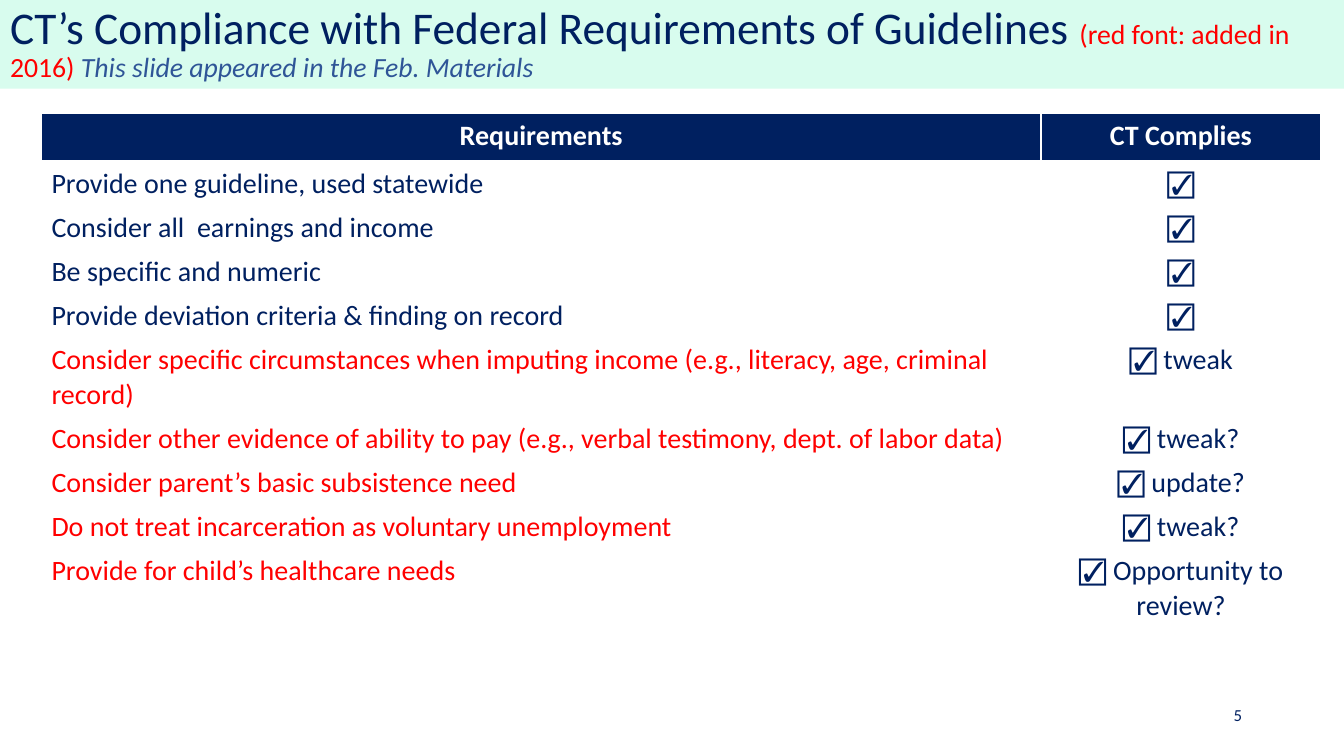
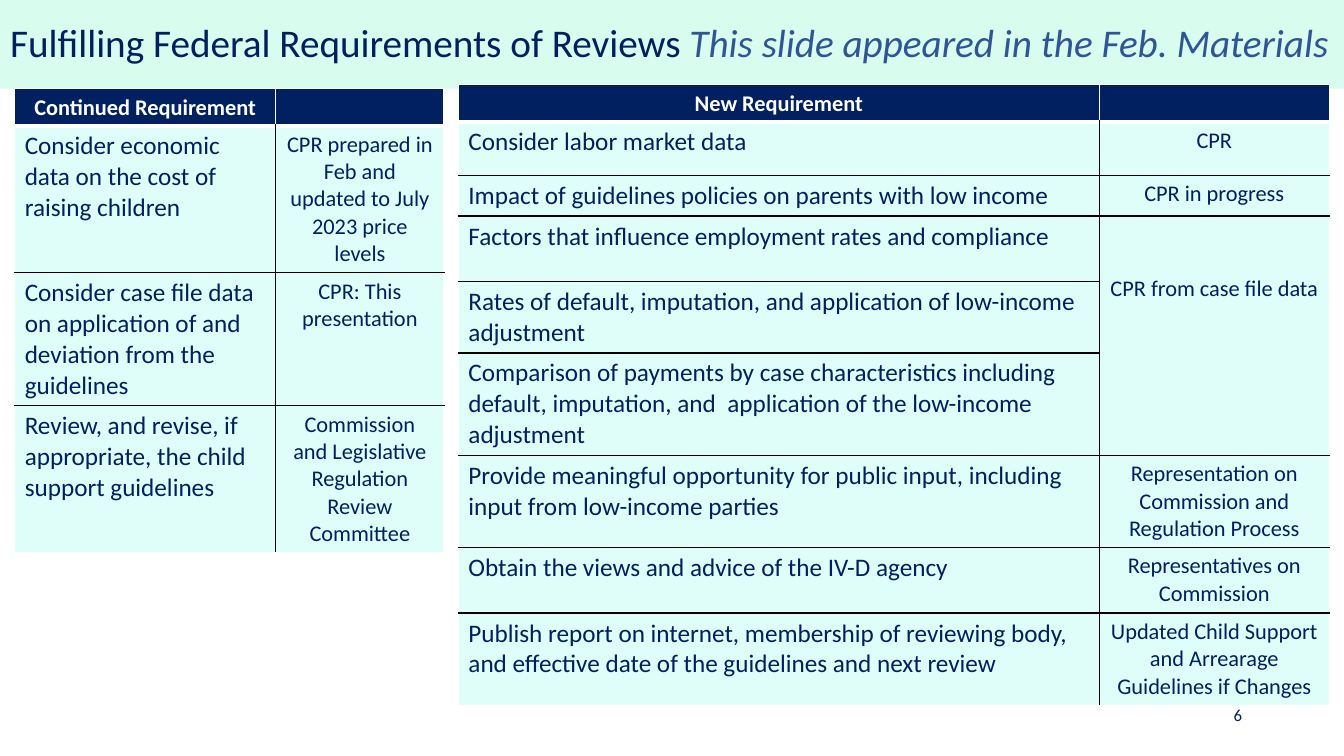
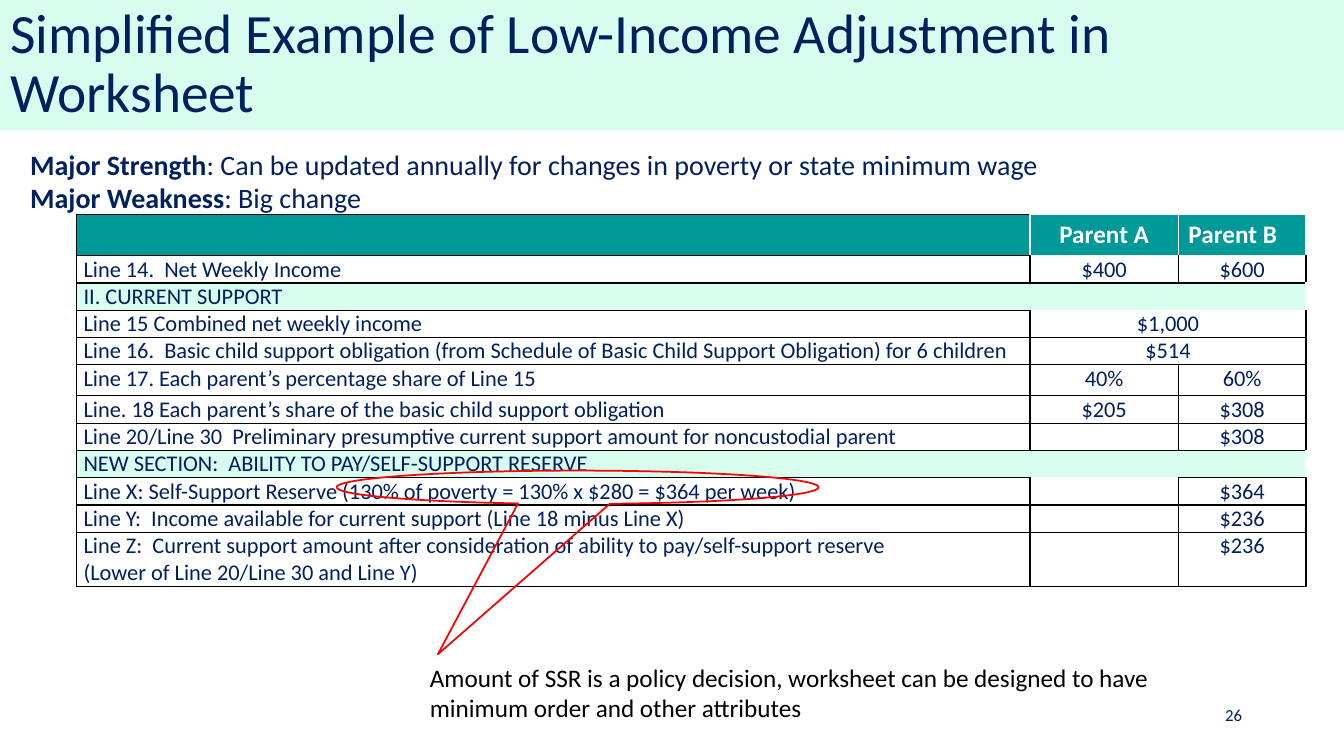
"""Builds three slides on child support guideline requirements."""
from lxml import etree
from pptx import Presentation
from pptx.dml.color import RGBColor
from pptx.enum import shapes, text
from pptx.oxml import ns
from pptx.util import Pt

NAVY = RGBColor(0x00, 0x20, 0x60)
BLUE = RGBColor(0x2F, 0x55, 0x97)
RED = RGBColor(0xFF, 0x00, 0x00)
BLACK = RGBColor(0x00, 0x00, 0x00)
WHITE = RGBColor(0xFF, 0xFF, 0xFF)
MINT = RGBColor(0xD8, 0xFC, 0xEE)
AQUA = RGBColor(0xDF, 0xFD, 0xF9)
TEAL = RGBColor(0x00, 0x99, 0x99)
FONT = "Calibri"
LEFT, CENTER, RIGHT = text.PP_ALIGN.LEFT, text.PP_ALIGN.CENTER, text.PP_ALIGN.RIGHT


def border(cell, sides, color, width=1):
    tc_pr = cell._tc.get_or_add_tcPr()
    for side in sides:
        ln = tc_pr.find(ns.qn("a:ln" + side))
        if ln is None:
            ln = etree.SubElement(tc_pr, ns.qn("a:ln" + side))
        ln.clear()
        ln.set("w", str(Pt(width)))
        fill = etree.SubElement(ln, ns.qn("a:solidFill"))
        etree.SubElement(fill, ns.qn("a:srgbClr")).set("val", str(color))


def make_table(s, left, top, widths, heights, rows, sizes, head_size, head_fill=NAVY,
               body_fill=WHITE, edge=WHITE, inner=WHITE, head_line=3, margins=(7.2, 3.6),
               space=6):
    frame = s.shapes.add_table(len(heights), len(widths), Pt(left), Pt(top),
                               Pt(sum(widths)), Pt(sum(heights)))
    t = frame.table
    t.horz_banding = False
    for col, width in zip(t.columns, widths):
        col.width = Pt(width)
    for i, height in enumerate(heights):
        t.rows[i].height = Pt(height)
        head = i == 0
        for j, size in enumerate(sizes):
            cell = t.cell(i, j)
            border(cell, "L", edge if j == 0 else WHITE if head else inner)
            border(cell, "R", edge if j == len(widths) - 1 else WHITE if head else inner)
            border(cell, "T", WHITE if i < 2 else inner)
            border(cell, "B", WHITE if head else edge if i == len(heights) - 1 else inner,
                   head_line if head else 1)
            cell.fill.solid()
            cell.fill.fore_color.rgb = head_fill if head else body_fill
            if not head:
                cell.margin_left = cell.margin_right = Pt(margins[0])
                cell.margin_top = cell.margin_bottom = Pt(margins[1])
            size = head_size if head else size
            tf = cell.text_frame
            for k, line in enumerate(rows[i][j].split("\n")):
                p = tf.add_paragraph() if k else tf.paragraphs[0]
                p.alignment = CENTER if head or j else LEFT
                if not line:
                    p._p.get_or_add_endParaRPr().set("sz", str(size * 100))
                    continue
                if j == 0 and not head:
                    p.space_before = Pt(space)
                r = p.add_run()
                r.text = line
                r.font.name, r.font.size, r.font.bold = FONT, Pt(size), head
                r.font.color.rgb = WHITE if head else NAVY
    return t


prs = Presentation()
prs.slide_width, prs.slide_height = Pt(960), Pt(540)

titles = [
    (63.4, "5", [("CT’s Compliance with Federal Requirements of Guidelines ", 32.4, NAVY),
                 ("(red font: added in 2016) ", 19.8, RED),
                 ("This slide appeared in the Feb. Materials", 19.8, BLUE)]),
    (63.4, "6", [("Fulfilling Federal Requirements of Reviews", 28, NAVY),
                 (" This slide appeared in the Feb. Materials", 28, BLUE)]),
    (92.9, "26", [("Simplified Example of Low-Income Adjustment in Worksheet", 39.6, NAVY)]),
]
for height, number, runs in titles:
    s = prs.slides.add_slide(prs.slide_layouts[5])
    sp = s.shapes.title
    sp.left, sp.top, sp.width, sp.height = Pt(0), Pt(0), Pt(960), Pt(height)
    sp.fill.solid()
    sp.fill.fore_color.rgb = MINT
    tf = sp.text_frame
    tf.auto_size = text.MSO_AUTO_SIZE.NONE
    tf.vertical_anchor = text.MSO_ANCHOR.MIDDLE
    p = tf.paragraphs[0]
    p.alignment, p.line_spacing = LEFT, 0.9
    for words, size, color in runs:
        r = p.add_run()
        r.text = words
        r.font.name, r.font.size, r.font.italic = FONT, Pt(size), color == BLUE
        r.font.color.rgb = color

    tf = s.shapes.add_textbox(Pt(859.7), Pt(501.8), Pt(34.6), Pt(17.3)).text_frame
    tf.word_wrap = True
    tf.vertical_anchor = text.MSO_ANCHOR.MIDDLE
    p = tf.paragraphs[0]
    p.alignment = RIGHT
    r = p.add_run()
    r.text = number
    r.font.name, r.font.size = FONT, Pt(12)
    r.font.color.rgb = NAVY

compliance, reviews, worksheet = prs.slides

rows = [
    ("Requirements", "CT Complies"),
    ("Provide one guideline, used statewide", "☑"),
    ("Consider all  earnings and income", "☑"),
    ("Be specific and numeric", "☑"),
    ("Provide deviation criteria & finding on record", "☑"),
    ("Consider specific circumstances when imputing income (e.g., literacy, age, criminal record)",
     "☑ tweak"),
    ("Consider other evidence of ability to pay (e.g., verbal testimony, dept. of labor data)",
     "☑ tweak?"),
    ("Consider parent’s basic subsistence need", "☑ update?"),
    ("Do not treat incarceration as voluntary unemployment", "☑ tweak?"),
    ("Provide for child’s healthcare needs", "☑ Opportunity to review?"),
]
heights = [34] + [31.6] * 4 + [56] + [31.6] * 3 + [56]
t = make_table(compliance, 29.6, 81.3, [714, 200], heights, rows, (20, 20), 20)
for i in range(5, len(rows)):
    t.cell(i, 0).text_frame.paragraphs[0].runs[0].font.color.rgb = RED

continued = [
    ("Continued Requirement", ""),
    ("Consider economic data on the cost of raising children",
     "CPR prepared in Feb and updated to July 2023 price levels"),
    ("Consider case file data on application of and deviation from the guidelines",
     "CPR: This presentation"),
    ("Review, and revise, if appropriate, the child support guidelines",
     "Commission and Legislative Regulation Review Committee"),
]
new = [
    ("New Requirement", ""),
    ("Consider labor market data", "CPR"),
    ("Impact of guidelines policies on parents with low income", "CPR in progress"),
    ("Factors that influence employment rates and compliance", "CPR from case file data"),
    ("Rates of default, imputation, and application of low-income adjustment", ""),
    ("Comparison of payments by case characteristics including default, imputation, and  "
     "application of the low-income adjustment", ""),
    ("Provide meaningful opportunity for public input, including input from low-income parties",
     "Representation on Commission and Regulation Process"),
    ("Obtain the views and advice of the IV-D agency", "Representatives on Commission"),
    ("Publish report on internet, membership of reviewing body, and effective date of the "
     "guidelines and next review", "Updated Child Support and Arrearage Guidelines if Changes"),
]
for left, top, widths, heights, rows in [
    (10.5, 63.4, [186.5, 120.2], [26, 105, 95, 105], continued),
    (327.4, 60.5, [457.9, 164.2], [26, 38.2, 29.2, 46.8, 51, 73.2, 65.8, 46.8, 65.8], new),
]:
    t = make_table(reviews, left, top, widths, heights, rows, (18, 16), 16,
                   body_fill=AQUA, inner=BLACK)
t.cell(3, 1).merge(t.cell(5, 1))
t.cell(3, 1).margin_top = Pt(42.6)

tf = worksheet.shapes.add_textbox(Pt(14.4), Pt(101.5), Pt(930), Pt(56)).text_frame
tf.word_wrap = True
points = [("Major Strength",
           ": Can be updated annually for changes in poverty or state minimum wage"),
          ("Major Weakness", ": Big change")]
for i, point in enumerate(points):
    p = tf.add_paragraph() if i else tf.paragraphs[0]
    for words, bold in zip(point, (True, False)):
        r = p.add_run()
        r.text = words
        r.font.name, r.font.size, r.font.bold = FONT, Pt(20), bold
        r.font.color.rgb = NAVY

rows = [
    ("", "Parent A", "Parent B"),
    ("Line 14.  Net Weekly Income", "$400", "$600"),
    ("II. CURRENT SUPPORT", "", ""),
    ("Line 15 Combined net weekly income", "$1,000", ""),
    ("Line 16.  Basic child support obligation (from Schedule of Basic Child Support Obligation) "
     "for 6 children", "$514", ""),
    ("Line 17. Each parent’s percentage share of Line 15", "40%", "60%"),
    ("Line. 18 Each parent’s share of the basic child support obligation", "$205", "$308"),
    ("Line 20/Line 30  Preliminary presumptive current support amount for noncustodial parent",
     "", "$308"),
    ("NEW SECTION:  ABILITY TO PAY/SELF-SUPPORT RESERVE", "", ""),
    ("Line X: Self-Support Reserve (130% of poverty = 130% x $280 = $364 per week)", "", "$364"),
    ("Line Y:  Income available for current support (Line 18 minus Line X)", "", "$236"),
    ("Line Z:  Current support amount after consideration of ability to pay/self-support reserve\n"
     "(Lower of Line 20/Line 30 and Line Y)", "", "$236"),
]
heights = [29.2] + [19.5] * 4 + [22.3] + [19.5] * 5 + [39]
t = make_table(worksheet, 54.7, 153.4, [681, 106, 91.2], heights, rows, (16, 16, 16), 18,
               head_fill=TEAL, edge=BLACK, inner=BLACK, head_line=1, margins=(5, 0), space=0)
t.cell(0, 2).text_frame.paragraphs[0].alignment = LEFT
border(t.cell(0, 0), "LRTB", BLACK)
border(t.cell(1, 0), "T", BLACK)
border(t.cell(0, 2), "R", WHITE)
for i in (2, 8):
    for j in range(3):
        t.cell(i, j).fill.fore_color.rgb = MINT
    border(t.cell(i, 0), "R", WHITE)
    border(t.cell(i, 2), "R", WHITE)
    border(t.cell(i, 1), "B", WHITE)
    border(t.cell(i + 1, 1), "T", WHITE)
    t.cell(i, 0).merge(t.cell(i, 2))
border(t.cell(2, 2), "B", WHITE)
border(t.cell(3, 2), "T", WHITE)
for i in (3, 4):
    t.cell(i, 1).merge(t.cell(i, 2))

sp = worksheet.shapes.add_shape(shapes.MSO_SHAPE.OVAL_CALLOUT, Pt(240.5), Pt(336.2),
                                Pt(344.2), Pt(23.8))
sp.adjustments[0], sp.adjustments[1] = -0.29, 5.01
sp.shadow.inherit = False
sp.fill.background()
sp.line.color.rgb = RED
sp.line.width = Pt(1.25)

tf = worksheet.shapes.add_textbox(Pt(300), Pt(469.4), Pt(576), Pt(51)).text_frame
tf.word_wrap = True
r = tf.paragraphs[0].add_run()
r.text = ("Amount of SSR is a policy decision, worksheet can be designed to have "
          "minimum order and other attributes")
r.font.name, r.font.size = FONT, Pt(18)
r.font.color.rgb = BLACK

prs.save("out.pptx")
